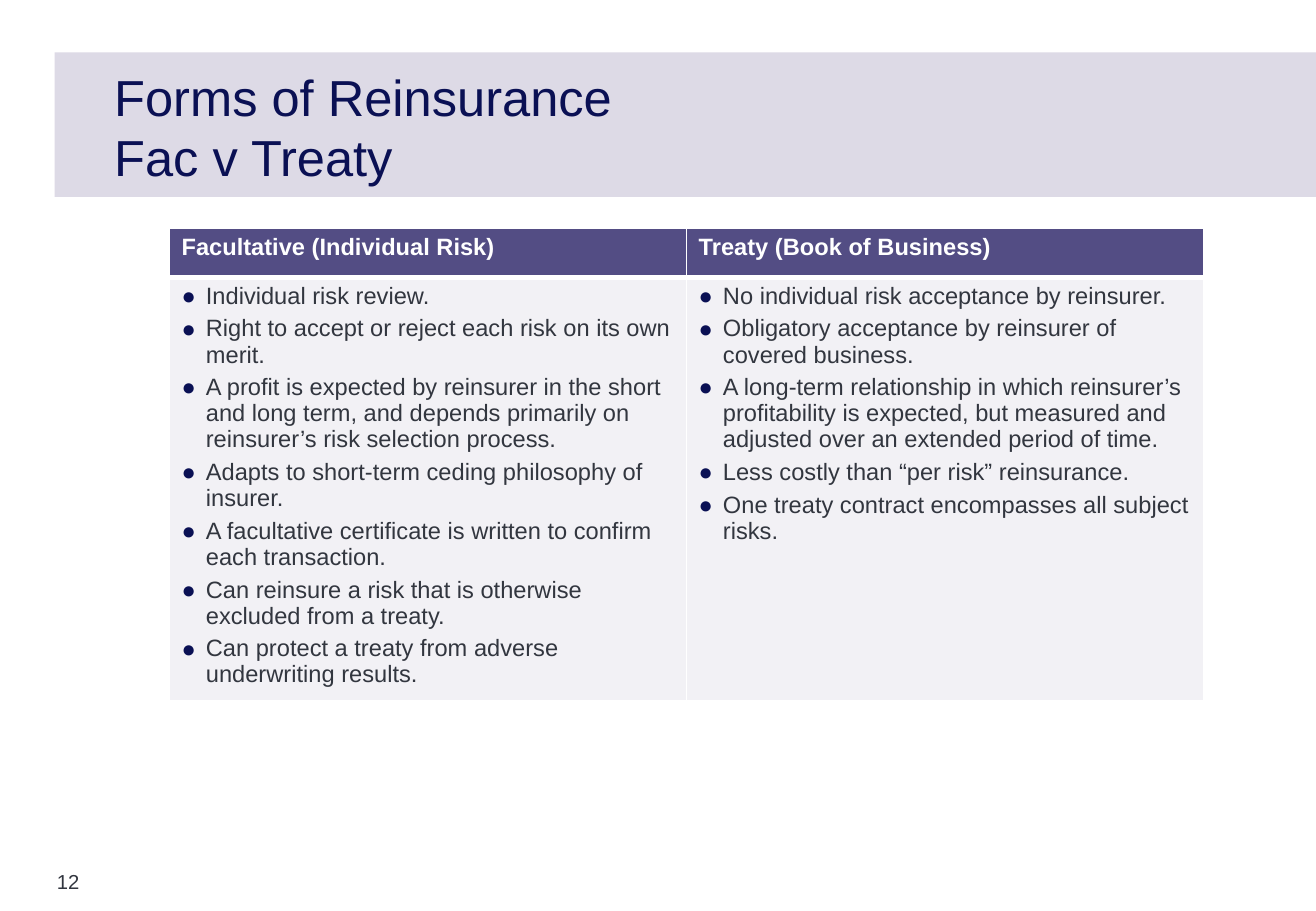
"""Build the slide comparing facultative and treaty reinsurance."""
from dataclasses import dataclass

from lxml.etree import SubElement
from pptx import Presentation
from pptx.dml.color import RGBColor
from pptx.enum.shapes import MSO_SHAPE
from pptx.enum.text import MSO_ANCHOR, PP_ALIGN
from pptx.oxml.ns import qn
from pptx.util import Pt

FONT = "Arial"
NAVY, INK, WHITE = "0A1054", "32363F", "FFFFFF"
BAND, HEADER, BODY = "DDDAE6", "534D84", "F2F1F5"
COLUMN_WIDTH, HEADER_HEIGHT, BODY_HEIGHT = 306.4, 29.2, 251


@dataclass
class Column:
    heading: str
    points: list[str]


COLUMNS = [
    Column("Facultative (Individual Risk)", [
        "Individual risk review.",
        "Right to accept or reject each risk on its own merit.",
        "A profit is expected by reinsurer in the short and long term, "
        "and depends primarily on reinsurer’s risk selection process.",
        "Adapts to short-term ceding philosophy of insurer.",
        "A facultative certificate is written to confirm each transaction.",
        "Can reinsure a risk that is otherwise excluded from a treaty.",
        "Can protect a treaty from adverse underwriting results.",
    ]),
    Column("Treaty (Book of Business)", [
        "No individual risk acceptance by reinsurer.",
        "Obligatory acceptance by reinsurer of covered business.",
        "A long-term relationship in which reinsurer’s profitability is expected, "
        "but measured and adjusted over an extended period of time.",
        "Less costly than “per risk” reinsurance.",
        "One treaty contract encompasses all subject risks.",
    ]),
]


def rgb(value: str) -> RGBColor:
    return RGBColor.from_string(value)


def format_runs(p, size: float, color: str, bold: bool = False) -> None:
    for r in p.runs:
        r.font.name = FONT
        r.font.size = Pt(size)
        r.font.bold = bold
        r.font.color.rgb = rgb(color)


def place(shape, left: float, top: float, width: float, height: float) -> None:
    shape.left, shape.top = Pt(left), Pt(top)
    shape.width, shape.height = Pt(width), Pt(height)


def clear_margins(tf) -> None:
    tf.margin_left = tf.margin_right = tf.margin_top = tf.margin_bottom = 0
    tf.word_wrap = True


def add_bullet(p) -> None:
    pPr = p._p.get_or_add_pPr()
    pPr.set("marL", str(Pt(14.4)))
    pPr.set("indent", str(-Pt(14.4)))
    color = SubElement(pPr, qn("a:buClr"))
    SubElement(color, qn("a:srgbClr"), val=NAVY)
    SubElement(pPr, qn("a:buFont"), typeface=FONT)
    SubElement(pPr, qn("a:buChar"), char="●")


def style_cell(cell, fill: str, bottom: float) -> None:
    tcPr = cell._tc.get_or_add_tcPr()
    for side, width in {"L": 1, "R": 1, "T": 1, "B": bottom}.items():
        line = SubElement(tcPr, qn(f"a:ln{side}"), w=str(Pt(width)))
        SubElement(SubElement(line, qn("a:solidFill")), qn("a:srgbClr"), val=WHITE)
    cell.fill.solid()
    cell.fill.fore_color.rgb = rgb(fill)


def add_band(slide) -> None:
    sp = slide.shapes.add_shape(MSO_SHAPE.RECTANGLE, Pt(32.4), Pt(31), Pt(747.4), Pt(85.7))
    sp.shadow.inherit = False
    sp.fill.solid()
    sp.fill.fore_color.rgb = rgb(BAND)
    sp.line.fill.background()
    slide.shapes._spTree.insert(2, sp._element)


def add_title(slide) -> None:
    title = slide.shapes.title
    place(title, 67.7, 43.2, 646.6, 67.7)
    tf = title.text_frame
    clear_margins(tf)
    tf.vertical_anchor = MSO_ANCHOR.BOTTOM
    tf.text = "Forms of Reinsurance\vFac v Treaty"
    p = tf.paragraphs[0]
    p.alignment = PP_ALIGN.LEFT
    format_runs(p, 30, NAVY)


def add_comparison(slide) -> None:
    frame = slide.shapes.add_table(
        2, len(COLUMNS), Pt(100.4), Pt(135.2),
        Pt(COLUMN_WIDTH * len(COLUMNS)), Pt(HEADER_HEIGHT + BODY_HEIGHT))
    table = frame.table
    table.rows[0].height, table.rows[1].height = Pt(HEADER_HEIGHT), Pt(BODY_HEIGHT)
    for i, column in enumerate(COLUMNS):
        table.columns[i].width = Pt(COLUMN_WIDTH)
        head, body = table.cell(0, i), table.cell(1, i)
        style_cell(head, HEADER, 3)
        style_cell(body, BODY, 1)
        head.text_frame.text = column.heading
        format_runs(head.text_frame.paragraphs[0], 14, WHITE, bold=True)
        tf = body.text_frame
        for j, point in enumerate(column.points):
            p = tf.add_paragraph() if j else tf.paragraphs[0]
            p.text = point
            p.line_spacing = 0.98
            if j:
                p.space_before = Pt(4)
            add_bullet(p)
            format_runs(p, 14, INK)


def add_page_number(slide) -> None:
    box = slide.shapes.add_textbox(Pt(33.8), Pt(515.5), Pt(28), Pt(18.7))
    tf = box.text_frame
    clear_margins(tf)
    tf.text = "12"
    format_runs(tf.paragraphs[0], 12, INK)


def main() -> None:
    prs = Presentation()
    prs.slide_width, prs.slide_height = Pt(779.8), Pt(540)
    slide = prs.slides.add_slide(prs.slide_layouts[5])
    add_band(slide)
    add_title(slide)
    add_comparison(slide)
    add_page_number(slide)
    prs.save("out.pptx")


if __name__ == "__main__":
    main()
